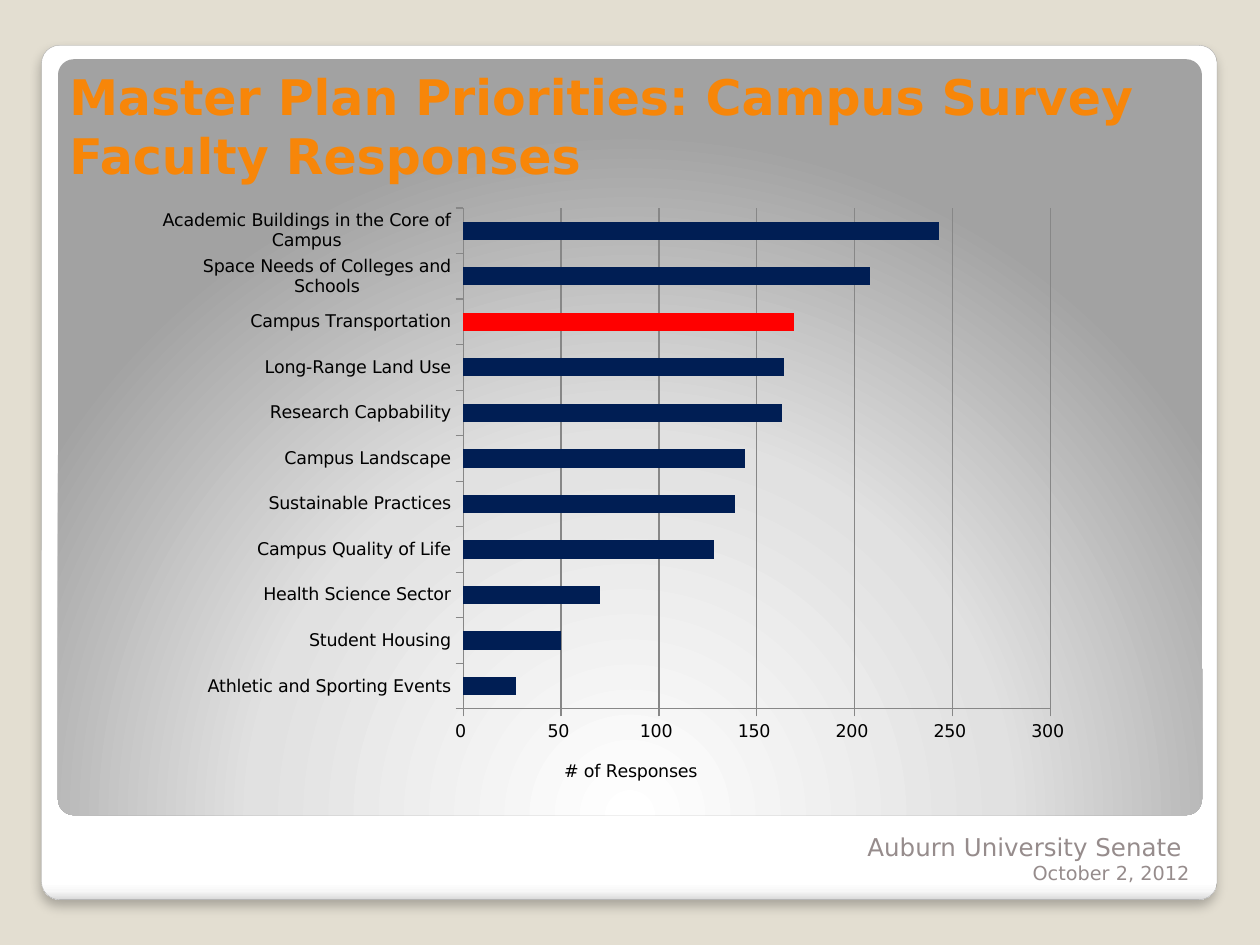
from lxml import etree
from pptx import Presentation
from pptx.chart.data import CategoryChartData
from pptx.dml.color import RGBColor
from pptx.enum.chart import XL_CHART_TYPE, XL_TICK_MARK
from pptx.enum.shapes import MSO_SHAPE
from pptx.enum.text import MSO_ANCHOR, MSO_AUTO_SIZE, PP_ALIGN
from pptx.oxml import parse_xml
from pptx.oxml.ns import nsdecls, qn
from pptx.util import Inches, Pt

COLORS = {
    "background": "E3DED1",
    "frame_line": "A4A4A4",
    "title": "F78609",
    "footer": "968C8C",
    "text": "000000",
    "axis": "878787",
    "bar": "001E54",
    "highlight": "FF0000",
}
FONT = "DejaVu Sans"
FRAME_STOPS = [(0, "FFFFFF"), (98, "FFFFFF"), (99, "F7F7F7"), (100, "DADADA")]
PANEL_STOPS = [(0, "FFFFFF"), (55, "E1E1E1"), (100, "A2A2A2")]
FRAME_DIRECTION = '<a:lin ang="5400000" scaled="0"/>'
PANEL_DIRECTION = ('<a:path path="circle"><a:fillToRect l="50000" t="175000" '
                   'r="50000" b="-75000"/></a:path>')
HIGHLIGHTED = "Campus Transportation"
RESPONSES = {
    "Athletic and Sporting Events": 27,
    "Student Housing": 50,
    "Health Science Sector": 70,
    "Campus Quality of Life": 128,
    "Sustainable Practices": 139,
    "Campus Landscape": 144,
    "Research Capbability": 163,
    "Long-Range Land Use": 164,
    HIGHLIGHTED: 169,
    "Space Needs of Colleges and Schools": 208,
    "Academic Buildings in the Core of Campus": 243,
}


def rgb(name):
    return RGBColor.from_string(COLORS[name])


def apply(target, formats):
    for attribute, value in formats.items():
        setattr(target, attribute, value)


def style_font(font, size, color, bold=False):
    apply(font, {"name": FONT, "size": Pt(size), "bold": bold})
    font.color.rgb = rgb(color)


def add_rounded_panel(slide, box, stops, direction):
    panel = slide.shapes.add_shape(MSO_SHAPE.ROUNDED_RECTANGLE, *map(Inches, box))
    panel.adjustments[0] = 0.021
    panel.shadow.inherit = False
    panel.line.fill.background()
    stop_xml = "".join(f'<a:gs pos="{position * 1000}"><a:srgbClr val="{color}"/></a:gs>'
                       for position, color in stops)
    gradient = parse_xml(f'<a:gradFill {nsdecls("a")} rotWithShape="1">'
                         f'<a:gsLst>{stop_xml}</a:gsLst>{direction}</a:gradFill>')
    panel._element.spPr.find(qn("a:prstGeom")).addnext(gradient)
    return panel


def add_drop_shadow(panel):
    effects = panel._element.spPr.find(qn("a:effectLst"))
    effects.append(parse_xml(
        f'<a:outerShdw {nsdecls("a")} blurRad="{Pt(6)}" dist="{Pt(4)}" dir="5400000" '
        'algn="tl" rotWithShape="0"><a:srgbClr val="000000"><a:alpha val="25000"/>'
        '</a:srgbClr></a:outerShdw>'))


def add_footer_line(slide, box, text, size):
    frame = slide.shapes.add_textbox(*map(Inches, box)).text_frame
    apply(frame, {"word_wrap": True, "vertical_anchor": MSO_ANCHOR.TOP, "text": text})
    paragraph = frame.paragraphs[0]
    apply(paragraph, {"alignment": PP_ALIGN.RIGHT, "line_spacing": Pt(18)})
    style_font(paragraph.runs[0].font, size, "footer")


def fill_title(title, box, text):
    apply(title, dict(zip(("left", "top", "width", "height"), map(Inches, box))))
    frame = title.text_frame
    apply(frame, {"text": text, "word_wrap": True, "auto_size": MSO_AUTO_SIZE.NONE,
                  "vertical_anchor": MSO_ANCHOR.TOP, "margin_top": Inches(0.08)})
    frame.paragraphs[0].alignment = PP_ALIGN.LEFT
    style_font(frame.paragraphs[0].runs[0].font, 28, "title", bold=True)


def manual_layout(inner=False, **fractions):
    """Return a chart layout placed by fractions of the chart area."""
    layout = parse_xml(f'<c:layout {nsdecls("c")}><c:manualLayout/></c:layout>')
    settings = {"layoutTarget": "inner"} if inner else {}
    settings.update(xMode="edge", yMode="edge", **fractions)
    for tag, value in settings.items():
        etree.SubElement(layout[0], qn(f"c:{tag}")).set("val", str(value))
    return layout


def style_axis(axis):
    apply(axis, {"major_tick_mark": XL_TICK_MARK.OUTSIDE,
                 "minor_tick_mark": XL_TICK_MARK.NONE})
    style_font(axis.tick_labels.font, 10, "text")
    axis.format.line.color.rgb = rgb("axis")
    axis.format.line.width = Pt(0.75)


def add_response_chart(slide, box):
    data = CategoryChartData()
    data.categories = list(RESPONSES)
    data.add_series("Series 1", list(RESPONSES.values()))
    chart = slide.shapes.add_chart(XL_CHART_TYPE.BAR_STACKED, *map(Inches, box), data).chart
    apply(chart, {"has_legend": False, "has_title": False})
    style_font(chart.font, 10, "text")

    # Bars, with one category highlighted
    plot = chart.plots[0]
    apply(plot, {"gap_width": 150, "overlap": 100, "vary_by_categories": False})
    bars = plot.series[0]
    highlight = bars.points[list(RESPONSES).index(HIGHLIGHTED)]
    for part, color in ((bars, "bar"), (highlight, "highlight")):
        part.format.fill.solid()
        part.format.fill.fore_color.rgb = rgb(color)

    # Axes
    responses = chart.value_axis
    for axis in (chart.category_axis, responses):
        style_axis(axis)
    apply(responses, {"minimum_scale": 0, "maximum_scale": 300, "major_unit": 50,
                      "has_major_gridlines": True})
    gridline = responses.major_gridlines.format.line
    gridline.color.rgb = rgb("axis")
    gridline.width = Pt(0.75)
    apply(responses.tick_labels, {"number_format": r"#,##0_);\(#,##0\)",
                                  "number_format_is_linked": False})
    axis_title = responses.axis_title
    axis_title.text_frame.text = "# of Responses"
    style_font(axis_title.text_frame.paragraphs[0].runs[0].font, 10, "text")

    # Plot and axis title positions
    title_xml = axis_title._element
    plot_xml = chart._chartSpace.chart.plotArea
    for old in title_xml.findall(qn("c:layout")):
        title_xml.remove(old)
    for old in plot_xml.findall(qn("c:layout")):
        plot_xml.remove(old)
    title_xml.find(qn("c:tx")).addnext(manual_layout(x=0.43, y=0.92))
    plot_xml.insert(0, manual_layout(inner=True, x=0.324, y=0.019, w=0.636, h=0.823))


def main():
    presentation = Presentation()
    apply(presentation, {"slide_width": Inches(10), "slide_height": Inches(7.5)})
    slide = presentation.slides.add_slide(presentation.slide_layouts[5])
    slide.background.fill.solid()
    slide.background.fill.fore_color.rgb = rgb("background")

    # White frame and grey panel, kept behind the title
    frame = add_rounded_panel(slide, (0.33, 0.36, 9.33, 6.78), FRAME_STOPS, FRAME_DIRECTION)
    frame.line.color.rgb = rgb("frame_line")
    frame.line.width = Pt(0.16)
    add_drop_shadow(frame)
    add_rounded_panel(slide, (0.46, 0.47, 9.08, 6), PANEL_STOPS, PANEL_DIRECTION)

    # Footer
    add_footer_line(slide, (5.21, 6.54, 4.33, 0.42), "Auburn University Senate ", 14)
    add_footer_line(slide, (6.75, 6.72, 2.79, 0.42), "October 2, 2012", 11)

    # Title and chart
    title = slide.shapes.title
    slide.shapes._spTree.append(title._element)
    fill_title(title, (0.45, 0.45, 10, 1.25),
               "Master Plan Priorities: Campus Survey Faculty Responses")
    add_response_chart(slide, (1.29, 1.56, 7.34, 4.83))
    presentation.save("out.pptx")


if __name__ == "__main__":
    main()
